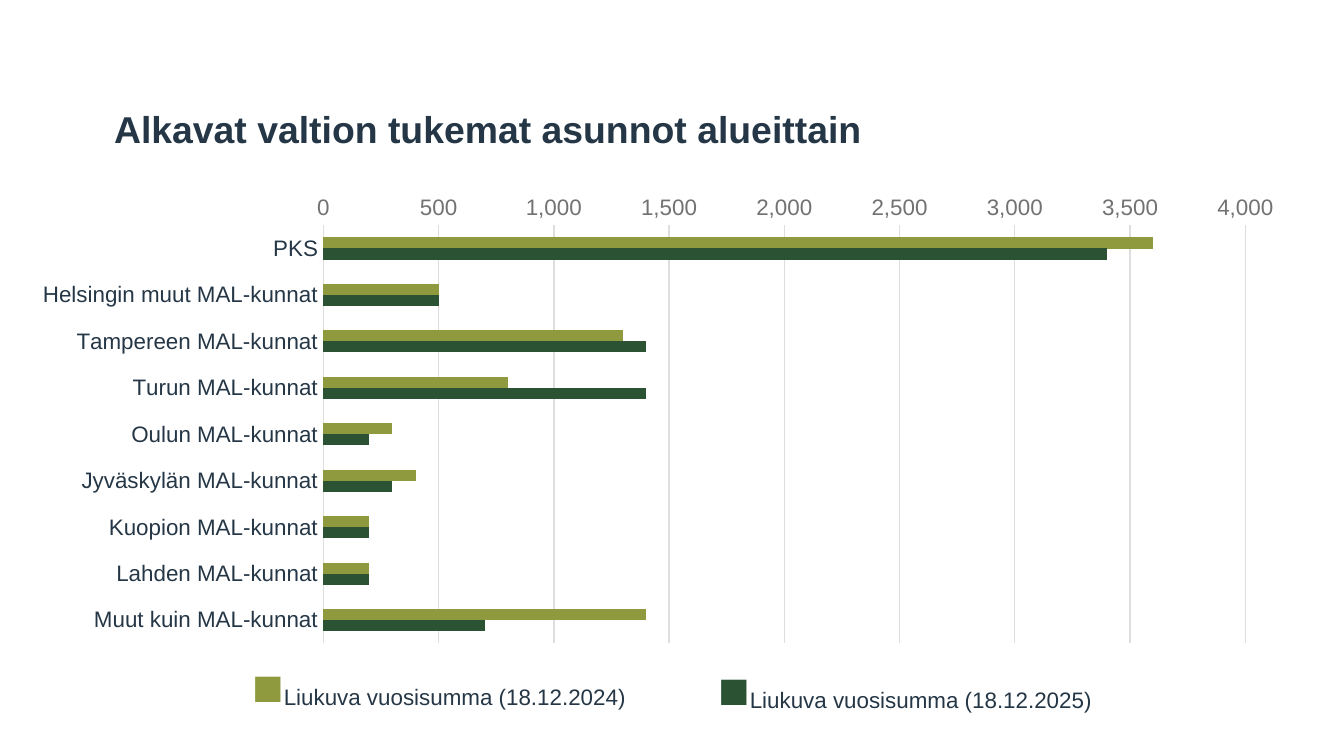
from lxml.etree import SubElement
from pptx import Presentation
from pptx.chart.data import CategoryChartData
from pptx.dml.color import RGBColor
from pptx.enum.chart import XL_CHART_TYPE as ChartType, XL_TICK_MARK as TickMark
from pptx.enum.text import MSO_ANCHOR as Anchor, PP_ALIGN as Align
from pptx.oxml.ns import qn
from pptx.util import Pt

NAVY, GREY, LINE = "253746", "727272", "DEDEDE"
FONT = "Arial"


def style(font, size, color, bold=False):
    font.name = FONT
    font.size = Pt(size)
    font.bold = bold
    font.color.rgb = RGBColor.from_string(color)


def add_box(left, top, width, height):
    box = page.shapes.add_textbox(Pt(left), Pt(top), Pt(width), Pt(height))
    box.text_frame.word_wrap = True
    box.text_frame.vertical_anchor = Anchor.MIDDLE
    return box


deck = Presentation()
deck.slide_width, deck.slide_height = Pt(720), Pt(405)
page = deck.slides.add_slide(deck.slide_layouts[6])

regions = ["PKS"] + [
    f"{name} MAL-kunnat"
    for name in ("Helsingin muut", "Tampereen", "Turun", "Oulun",
                 "Jyväskylän", "Kuopion", "Lahden", "Muut kuin")
]
series_rows = [
    ("Liukuva vuosisumma (18.12.2024)", "8F993E",
     [3600, 500, 1300, 800, 300, 400, 200, 200, 1400]),
    ("Liukuva vuosisumma (18.12.2025)", "2C5234",
     [3400, 500, 1400, 1400, 200, 300, 200, 200, 700]),
]
data = CategoryChartData(number_format="#,##0")
data.categories = regions
for name, color, values in series_rows:
    data.add_series(name, values)

chart = page.shapes.add_chart(
    ChartType.BAR_CLUSTERED, Pt(8.6), Pt(100.8), Pt(686), Pt(249), data
).chart
chart.has_legend = False
chart.has_title = False
style(chart.font, 12, NAVY)

plot = chart.plots[0]
plot.gap_width = 219
plot.overlap = 1
plot.vary_by_categories = False
for series, (name, color, values) in zip(plot.series, series_rows):
    series.format.fill.solid()
    series.format.fill.fore_color.rgb = RGBColor.from_string(color)

region_axis, value_axis = chart.category_axis, chart.value_axis
for axis, color in ((region_axis, NAVY), (value_axis, GREY)):
    axis.major_tick_mark = axis.minor_tick_mark = TickMark.NONE
    style(axis.tick_labels.font, 12, color)
region_axis.reverse_order = True
value_axis.minimum_scale = 0
value_axis.maximum_scale = 4000
value_axis.major_unit = 500
value_axis.tick_labels.number_format = "#,##0"
value_axis.tick_labels.number_format_is_linked = False
value_axis.has_major_gridlines = True
value_axis.format.line.fill.background()
for line in (region_axis.format.line, value_axis.major_gridlines.format.line):
    line.color.rgb = RGBColor.from_string(LINE)
    line.width = Pt(0.75)

plot_area = chart._chartSpace.chart.plotArea
for old_layout in plot_area.findall(qn("c:layout")):
    plot_area.remove(old_layout)
layout = SubElement(plot_area, qn("c:layout"))
plot_area.insert(0, layout)
manual = SubElement(layout, qn("c:manualLayout"))
for tag, value in (("layoutTarget", "inner"), ("xMode", "edge"), ("yMode", "edge"),
                   ("x", 0.24), ("y", 0.08), ("w", 0.72), ("h", 0.9)):
    SubElement(manual, qn(f"c:{tag}")).set("val", str(value))

title = add_box(54, 55.4, 660, 27.4)
title.text_frame.text = "Alkavat valtion tukemat asunnot alueittain"
style(title.text_frame.paragraphs[0].runs[0].font, 20, NAVY, bold=True)

legend_places = [(105, 350, 260.6, 34), (377.3, 351.4, 215.3, 34)]
for place, (name, color, values) in zip(legend_places, series_rows):
    para = add_box(*place).text_frame.paragraphs[0]
    para.alignment = Align.CENTER
    para.space_after = Pt(12)
    for text, size, text_color in (("■", 28, color), (name, 12, NAVY)):
        span = para.add_run()
        span.text = text
        style(span.font, size, text_color)

deck.save("out.pptx")
